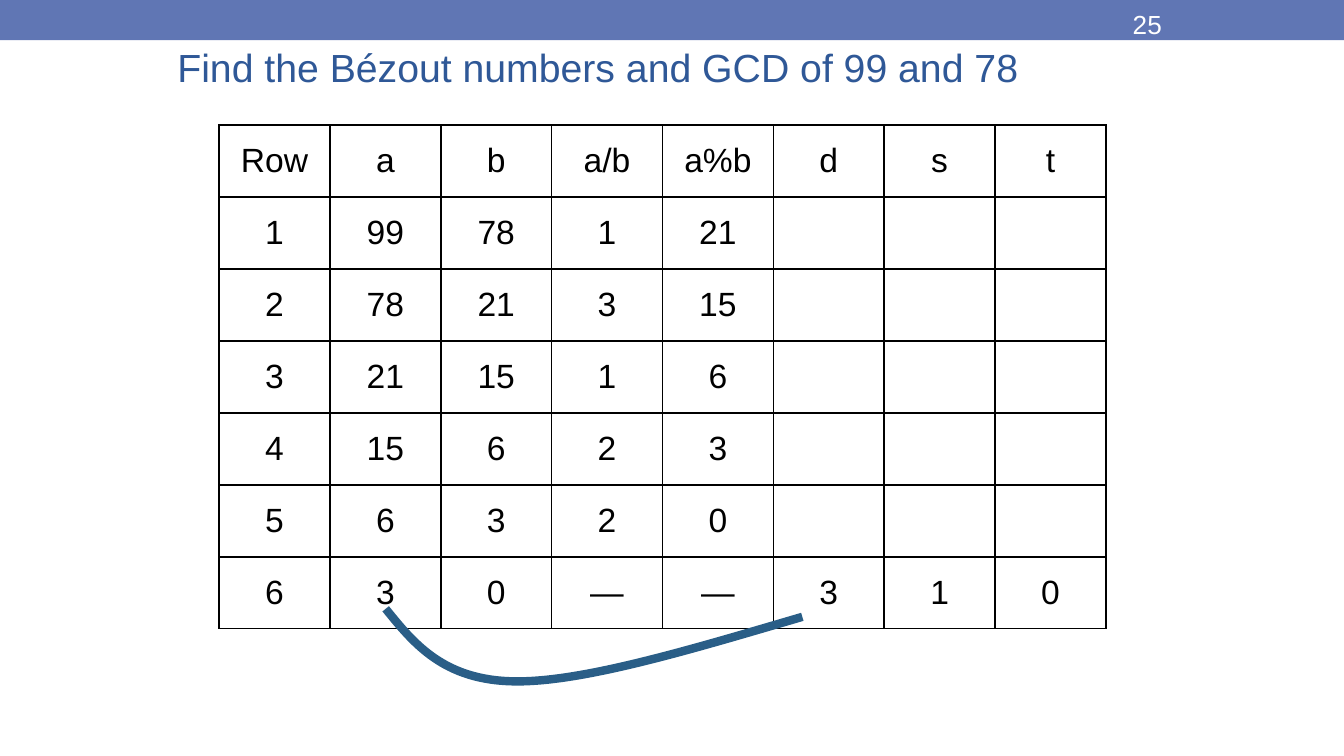
from dataclasses import dataclass

from lxml import etree
from pptx import Presentation
from pptx.dml.color import RGBColor
from pptx.enum.shapes import MSO_SHAPE
from pptx.enum.text import MSO_ANCHOR, PP_ALIGN
from pptx.oxml.ns import qn
from pptx.util import Inches, Pt

RECTANGLE = MSO_SHAPE.RECTANGLE
TOP, MIDDLE, BOTTOM = MSO_ANCHOR.TOP, MSO_ANCHOR.MIDDLE, MSO_ANCHOR.BOTTOM
LEFT, CENTER = PP_ALIGN.LEFT, PP_ALIGN.CENTER


@dataclass(frozen=True)
class Theme:
    """Colours, font and sizes of the slide."""

    font: str = "Arial"
    band: str = "6076B4"
    title: str = "2F5897"
    ink: str = "000000"
    white: str = "FFFFFF"
    curve: str = "2A5E87"
    title_size: float = 21
    cell_size: float = 18
    number_size: float = 14
    border_width: float = 1
    curve_width: float = 4.5


THEME = Theme()

EUCLID_ROWS = [
    ["Row", "a", "b", "a/b", "a%b", "d", "s", "t"],
    ["1", "99", "78", "1", "21", "", "", ""],
    ["2", "78", "21", "3", "15", "", "", ""],
    ["3", "21", "15", "1", "6", "", "", ""],
    ["4", "15", "6", "2", "3", "", "", ""],
    ["5", "6", "3", "2", "0", "", "", ""],
    ["6", "3", "0", "—", "—", "3", "1", "0"],
]

CURVE_POINTS = [
    (2.87, 4.53),
    (3.08, 4.79), (3.3, 5.06), (3.82, 5.07),
    (4.33, 5.08), (5.15, 4.83), (5.97, 4.59),
]


def style_paragraph(paragraph, size, color, alignment=LEFT):
    """Set the font and alignment of a paragraph."""
    paragraph.alignment = alignment
    paragraph.font.name = THEME.font
    paragraph.font.size = Pt(size)
    paragraph.font.color.rgb = RGBColor.from_string(color)


def add_band(slide, width, height):
    """Draw the coloured band along the top edge."""
    shape = slide.shapes.add_shape(RECTANGLE, 0, 0, width, height)
    shape.shadow.inherit = False
    shape.fill.solid()
    shape.fill.fore_color.rgb = RGBColor.from_string(THEME.band)
    shape.line.fill.background()


def add_text(slide, box, text, size, color, anchor, insets):
    """Add a one-paragraph text box with (horizontal, vertical) insets."""
    shape = slide.shapes.add_textbox(*(Inches(length) for length in box))
    frame = shape.text_frame
    frame.word_wrap = True
    frame.vertical_anchor = anchor
    frame.margin_left = frame.margin_right = Inches(insets[0])
    frame.margin_top = frame.margin_bottom = Inches(insets[1])
    paragraph = frame.paragraphs[0]
    paragraph.text = text
    style_paragraph(paragraph, size, color)


def add_borders(cell):
    """Draw a solid line on all four sides of a cell."""
    properties = cell._tc.get_or_add_tcPr()
    for side in ("a:lnL", "a:lnR", "a:lnT", "a:lnB"):
        line = etree.SubElement(properties, qn(side), w=str(Pt(THEME.border_width)))
        fill = etree.SubElement(line, qn("a:solidFill"))
        etree.SubElement(fill, qn("a:srgbClr"), val=THEME.ink)


def fill_cell(cell, text):
    """Write and style one table cell."""
    add_borders(cell)
    cell.fill.background()
    cell.vertical_anchor = MIDDLE
    cell.margin_left = cell.margin_right = Inches(0.08)
    cell.margin_top = cell.margin_bottom = Inches(0.04)
    paragraph = cell.text_frame.paragraphs[0]
    paragraph.text = text
    style_paragraph(paragraph, THEME.cell_size, THEME.ink, CENTER)


def add_grid(slide, box, rows):
    """Add a plain ruled table with equal rows and columns."""
    lengths = (Inches(length) for length in box)
    table = slide.shapes.add_table(len(rows), len(rows[0]), *lengths).table
    table.first_row = False
    table.horz_banding = False
    for row_index, row in enumerate(rows):
        for column_index, text in enumerate(row):
            fill_cell(table.cell(row_index, column_index), text)


def add_curve(slide, points):
    """Add an open Bézier curve: a start, then three points per segment."""
    start, *others = [(Inches(x), Inches(y)) for x, y in points]
    builder = slide.shapes.build_freeform(*start)
    builder.add_line_segments(others, close=False)
    shape = builder.convert_to_shape()
    shape.shadow.inherit = False
    shape.fill.background()
    shape.line.color.rgb = RGBColor.from_string(THEME.curve)
    shape.line.width = Pt(THEME.curve_width)
    outline = shape._element.find(".//" + qn("a:path"))
    segments = outline.findall(qn("a:lnTo"))
    for index in range(0, len(segments), 3):
        bezier = etree.SubElement(outline, qn("a:cubicBezTo"))
        for segment in segments[index:index + 3]:
            bezier.append(segment[0])
            outline.remove(segment)


def main():
    """Build and save the slide."""
    presentation = Presentation()
    presentation.slide_width = Inches(10)
    presentation.slide_height = Inches(10) * 9 // 16
    slide = presentation.slides.add_slide(presentation.slide_layouts[6])
    add_band(slide, presentation.slide_width, Inches(0.3))
    add_text(slide, (1.25, 0, 7.5, 0.75), "Find the Bézout numbers and GCD of 99 and 78",
             THEME.title_size, THEME.title, BOTTOM, (0.07, 0.08))
    add_grid(slide, (1.63, 0.93, 6.6, 3.75), EUCLID_ROWS)
    add_curve(slide, CURVE_POINTS)
    add_text(slide, (8.33, 0.01, 1.17, 0.27), "25",
             THEME.number_size, THEME.white, TOP, (0.1, 0.05))
    presentation.save("out.pptx")


if __name__ == "__main__":
    main()
